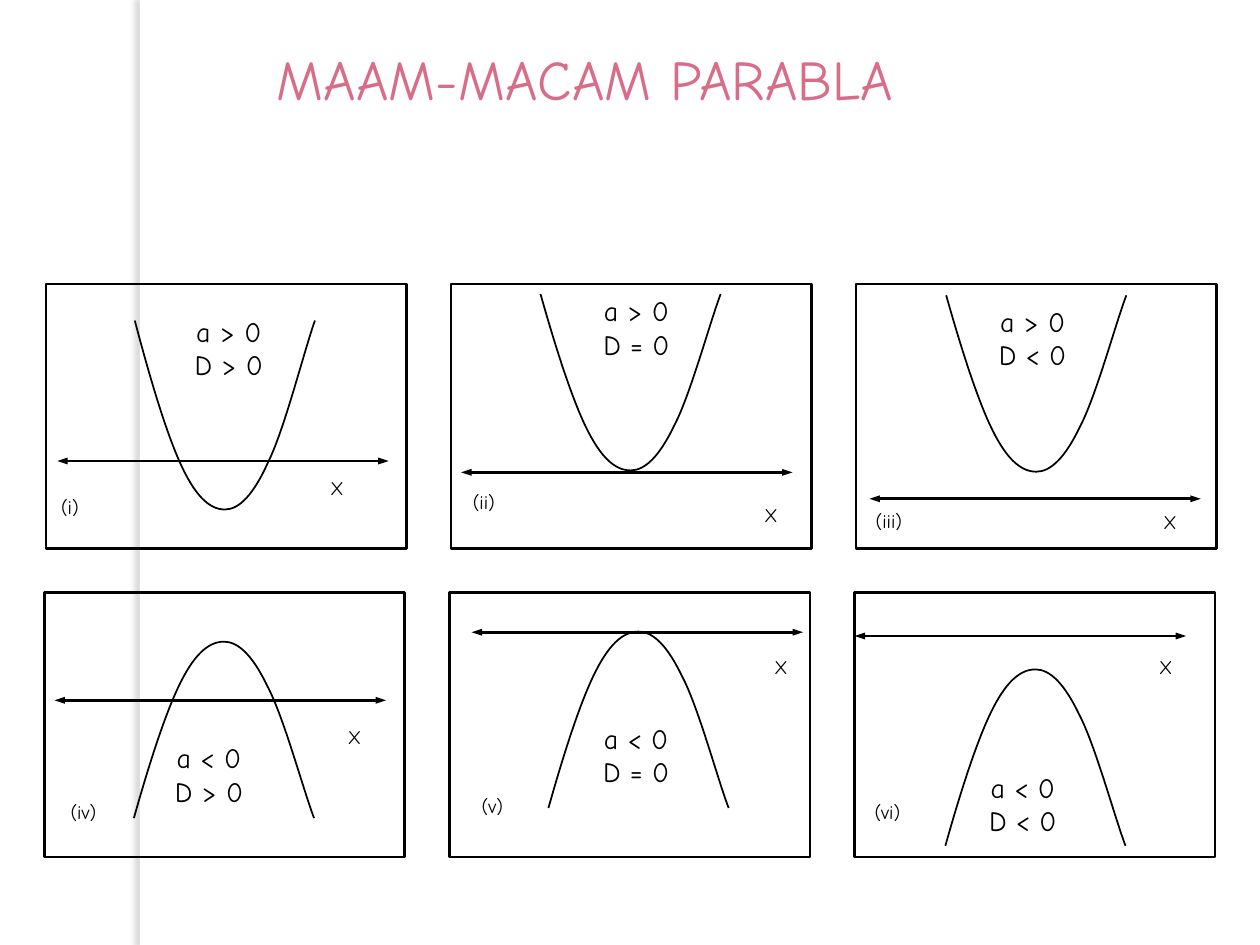
from lxml.etree import SubElement
from pptx import Presentation
from pptx.dml.color import RGBColor
from pptx.enum.shapes import MSO_CONNECTOR as CONN, MSO_SHAPE as SHAPE
from pptx.enum.text import MSO_ANCHOR as ANCHOR, PP_ALIGN as ALIGN
from pptx.oxml.ns import qn
from pptx.util import Inches, Pt

# The slide is a grid of 100 columns by 75 rows
COLS, ROWS = 100, 75
CELL = Inches(0.1)
FONT = "Comic Neue"
BLACK, WHITE, PINK, GREY = "000000", "FFFFFF", "D86D89", "7A7276"

PANEL_W, PANEL_H, PANEL_STEP = 28.6, 21, 32.15
AXIS_W, CURVE_W = 26.3, 14.3

# Bezier points of a parabola opening upwards, as shares of its box
PARABOLA = [(0, 0), (0.08, 0.29), (0.17, 0.58), (0.25, 0.75),
            (0.33, 0.92), (0.41, 1), (0.5, 1),
            (0.58, 1), (0.66, 0.92), (0.74, 0.75),
            (0.83, 0.58), (0.94, 0.16), (1, 0)]

# Each row of panels: left, top, curve opens upwards, panels.
# Places are relative to the panel; X and number give the text's top centre.
PANEL_ROWS = [
    (3.65, 22.54, True, [
        dict(number="(i)", d="D > 0", axis=(0.9, 14.05), curve=(7.05, 2.9, 15),
             x_at=(23.1, 15.3), number_at=(1.9, 16.8), cond_at=(10.9, 2.4)),
        dict(number="(ii)", d="D = 0", axis=(0.8, 14.95), curve=(7.1, 0.8, 14),
             x_at=(25.4, 17.4), number_at=(2.6, 16.4), cond_at=(11.1, 0.8)),
        dict(number="(iii)", d="D < 0", axis=(1.05, 17.05), curve=(7.15, 0.9, 14),
             x_at=(24.9, 18), number_at=(2.6, 17.9), cond_at=(10.4, 1.6)),
    ]),
    (3.53, 47.03, False, [
        dict(number="(iv)", d="D > 0", axis=(0.8, 8.55), curve=(7.1, 3.9, 14),
             x_at=(24.6, 10.5), number_at=(3.1, 16.5), cond_at=(9.45, 11.75)),
        dict(number="(v)", d="D = 0", axis=(1.75, 3.15), curve=(7.85, 3.1, 14),
             x_at=(26.3, 5), number_at=(3.4, 16), cond_at=(11.2, 10.2)),
        dict(number="(vi)", d="D < 0", axis=(0, 3.45), curve=(7.2, 6.1, 14),
             x_at=(24.7, 5), number_at=(2.6, 16.5), cond_at=(9.75, 14.1)),
    ]),
]


def grid(*values):
    return [round(v * CELL) for v in values]


def color(value):
    return RGBColor.from_string(value)


def add_text(s, box, text, size=11, fill=BLACK, align=ALIGN.CENTER,
             inset=(0.1, 0), indent=0):
    tf = s.shapes.add_textbox(*grid(*box)).text_frame
    tf.word_wrap = True
    tf.vertical_anchor = ANCHOR.TOP
    tf.margin_left = tf.margin_right = grid(inset[0])[0]
    tf.margin_top = tf.margin_bottom = grid(inset[1])[0]
    for i, line in enumerate(text.split("\n")):
        p = tf.paragraphs[0] if i == 0 else tf.add_paragraph()
        p.alignment = align
        if indent:
            p._p.get_or_add_pPr().set("marL", str(grid(indent)[0]))
        r = p.add_run()
        r.text = line
        r.font.name, r.font.size = FONT, Pt(size)
        r.font.color.rgb = color(fill)


def style_outline(sp, width):
    sp.shadow.inherit = False
    sp.fill.background()
    sp.line.color.rgb = color(BLACK)
    sp.line.width = Pt(width)


def add_axis(s, x, y):
    sp = s.shapes.add_connector(CONN.STRAIGHT, *grid(x, y, x + AXIS_W, y))
    sp.line.color.rgb = color(BLACK)
    sp.line.width = Pt(1.5)
    ln = sp.line._get_or_add_ln()
    for end in ("a:headEnd", "a:tailEnd"):
        SubElement(ln, qn(end), type="triangle", w="sm", len="med")
    SubElement(sp._element.spPr, qn("a:effectLst"))


def add_parabola(s, x, y, h, upwards):
    points = [grid(x + u * CURVE_W, y + (v if upwards else 1 - v) * h)
              for u, v in PARABOLA]
    builder = s.shapes.build_freeform(*points[0])
    builder.add_line_segments(points[1:], close=False)
    sp = builder.convert_to_shape()
    style_outline(sp, 1)
    # Every three straight segments become one cubic Bezier curve
    segments = list(sp._element.iter(qn("a:lnTo")))
    outline = segments[0].getparent()
    for k in range(0, len(segments), 3):
        curve = SubElement(outline, qn("a:cubicBezTo"))
        for segment in segments[k:k + 3]:
            curve.append(segment[0])
            outline.remove(segment)


def add_panel(s, left, top, upwards, number, d, axis, curve,
              x_at, number_at, cond_at):
    frame = s.shapes.add_shape(SHAPE.RECTANGLE, *grid(left, top, PANEL_W, PANEL_H))
    style_outline(frame, 1.5)
    add_axis(s, left + axis[0], top + axis[1])
    add_parabola(s, left + curve[0], top + curve[1], curve[2], upwards)
    # Labels centred on their places
    for text, (x, y), w in (("X", x_at, 3.6), (number, number_at, 4.8)):
        add_text(s, (left + x - w / 2, top + y, w, 2.4), text)
    condition = f"a {'>' if upwards else '<'} 0\n{d}"
    add_text(s, (left + cond_at[0], top + cond_at[1], 7.2, 5.3), condition, size=16)


def add_page_edge(s):
    sp = s.shapes.add_shape(SHAPE.RECTANGLE, *grid(11.1, 0, 0.8, ROWS))
    sp.fill.solid()
    sp.fill.fore_color.rgb = color(WHITE)
    sp.line.fill.background()
    sp.shadow.inherit = False
    # Soft shadow to the left
    effects = sp._element.spPr.find(qn("a:effectLst"))
    shadow = SubElement(effects, qn("a:outerShdw"), blurRad=str(Pt(3)),
                        dist=str(Pt(3)), dir=str(180 * 60000))
    tone = SubElement(shadow, qn("a:srgbClr"), val=GREY)
    SubElement(tone, qn("a:alpha"), val="25000")


def main():
    prs = Presentation()
    prs.slide_width, prs.slide_height = grid(COLS, ROWS)
    s = prs.slides.add_slide(prs.slide_layouts[6])
    add_page_edge(s)
    for left, top, upwards, panels in PANEL_ROWS:
        for i, panel in enumerate(panels):
            add_panel(s, left + i * PANEL_STEP, top, upwards, **panel)
    # Title
    add_text(s, (15.7, 3, 82, 12.5), "MAAM-MACAM PARABLA", size=32, fill=PINK,
             align=ALIGN.LEFT, inset=(1, 0.5), indent=5.3)
    prs.save("out.pptx")


if __name__ == "__main__":
    main()
